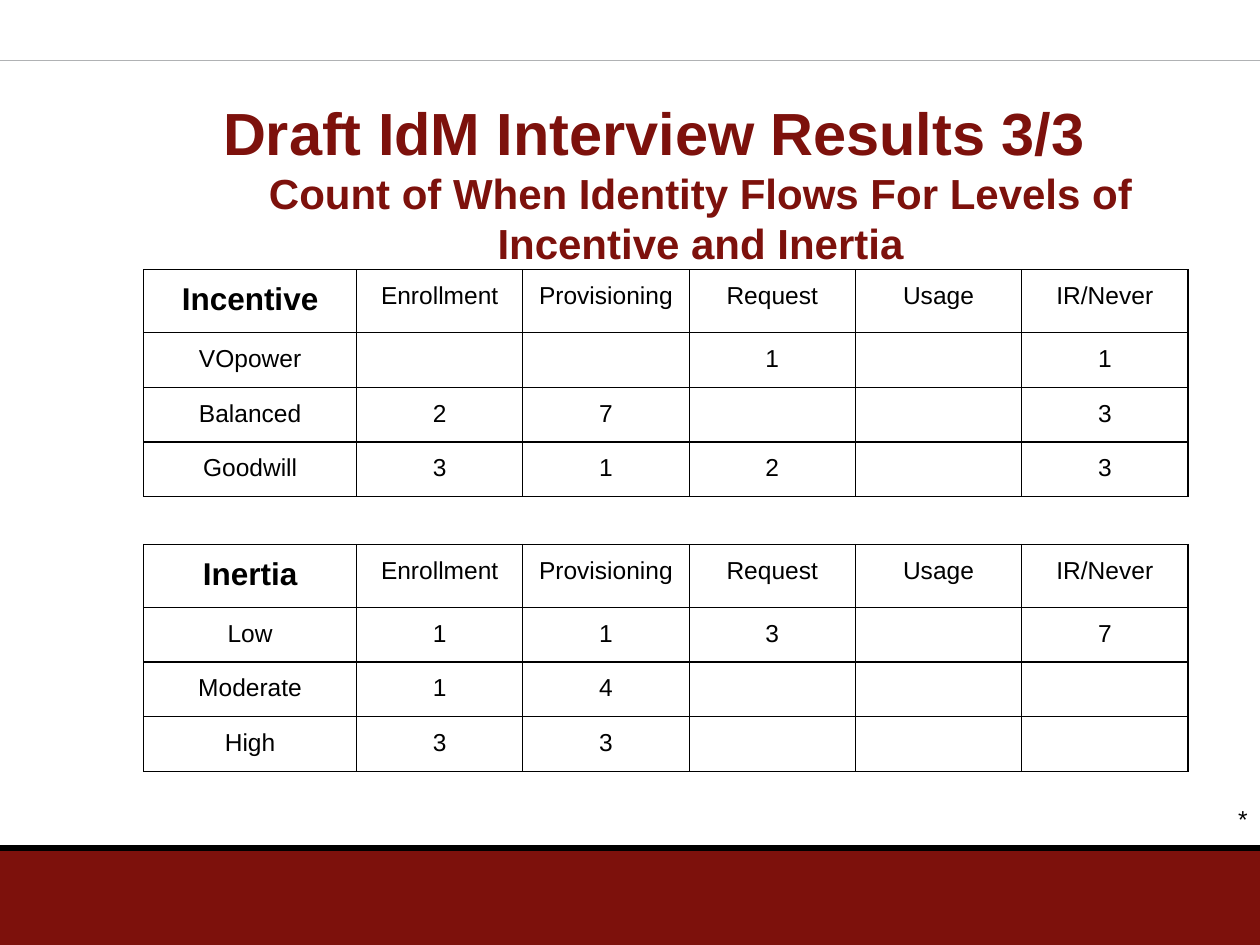
from lxml.etree import SubElement
from pptx import Presentation
from pptx.dml.color import RGBColor
from pptx.enum.shapes import MSO_CONNECTOR, MSO_SHAPE
from pptx.enum.text import MSO_ANCHOR, MSO_AUTO_SIZE, PP_ALIGN
from pptx.oxml.ns import qn
from pptx.util import Inches, Pt

COLORS = {"maroon": "7D110C", "rule": "B0B2B4", "ink": "000000"}
WIDTH, HEIGHT = 10, 7.5
STAGES = ["Enrollment", "Provisioning", "Request", "Usage", "IR/Never"]
LABEL_WIDTH, STAGE_WIDTH = 1.69, 1.32
HEADER_HEIGHT, ROW_HEIGHT = 0.48, 0.42
INCENTIVE = [
    ["VOpower", "", "", "1", "", "1"],
    ["Balanced", "2", "7", "", "", "3"],
    ["Goodwill", "3", "1", "2", "", "3"],
]
INERTIA = [
    ["Low", "1", "1", "3", "", "7"],
    ["Moderate", "1", "4", "", "", ""],
    ["High", "3", "3", "", "", ""],
]


def color(name):
    return RGBColor.from_string(COLORS[name])


def write(paragraph, text, size=14, fill="ink", bold=False, align=PP_ALIGN.CENTER):
    paragraph.alignment = align
    run = paragraph.add_run()
    run.text = text
    run.font.name = "Arial"
    run.font.size = Pt(size)
    run.font.bold = bold
    run.font.color.rgb = color(fill)


def set_margins(target, horizontal, top, bottom):
    target.margin_left = target.margin_right = Inches(horizontal)
    target.margin_top, target.margin_bottom = Inches(top), Inches(bottom)


def add_rule(slide, top, fill, weight):
    """Draw a horizontal line across the whole slide."""
    rule = slide.shapes.add_connector(
        MSO_CONNECTOR.STRAIGHT, 0, Inches(top), Inches(WIDTH), Inches(top))
    rule.line.color.rgb = color(fill)
    rule.line.width = Pt(weight)
    SubElement(rule._element.spPr, qn("a:effectLst"))


def add_frame(slide):
    """Add the top rule, the footer band and the page mark."""
    band_height = HEIGHT / 10
    band = slide.shapes.add_shape(
        MSO_SHAPE.RECTANGLE, 0, Inches(HEIGHT - band_height),
        Inches(WIDTH), Inches(band_height))
    band.shadow.inherit = False
    band.fill.solid()
    band.fill.fore_color.rgb = color("maroon")
    band.line.fill.background()
    add_rule(slide, 0.48, "rule", 0.75)
    add_rule(slide, 6.73, "ink", 3.75)
    mark = slide.shapes.add_textbox(
        Inches(WIDTH - 0.57), Inches(6.33), Inches(0.57), Inches(0.34))
    mark.text_frame.word_wrap = True
    set_margins(mark.text_frame, 0.1, 0.05, 0.05)
    write(mark.text_frame.paragraphs[0], "*", align=PP_ALIGN.RIGHT)


def add_title(slide, left, top, width, height):
    title = slide.shapes.title
    title.left, title.top = Inches(left), Inches(top)
    title.width, title.height = Inches(width), Inches(height)
    frame = title.text_frame
    frame.word_wrap = True
    frame.auto_size = MSO_AUTO_SIZE.NONE
    frame.vertical_anchor = MSO_ANCHOR.TOP
    set_margins(frame, 0.1, 0.15, 0.05)
    write(frame.paragraphs[0], "Draft IdM Interview Results 3/3",
          size=34, fill="maroon", bold=True, align=PP_ALIGN.LEFT)
    write(frame.add_paragraph(),
          "Count of When Identity Flows For Levels of Incentive and Inertia",
          size=24, fill="maroon", bold=True)


def add_borders(cell):
    properties = cell._tc.get_or_add_tcPr()
    for position, side in enumerate(("a:lnL", "a:lnR", "a:lnT", "a:lnB")):
        line = properties.makeelement(qn(side), {"w": str(Pt(0.75))})
        fill = SubElement(line, qn("a:solidFill"))
        SubElement(fill, qn("a:srgbClr"), val=COLORS["ink"])
        properties.insert(position, line)


def add_count_table(slide, heading, body, left, top):
    rows = [[heading, *STAGES], *body]
    widths = [LABEL_WIDTH] + [STAGE_WIDTH] * len(STAGES)
    heights = [HEADER_HEIGHT] + [ROW_HEIGHT] * len(body)
    table = slide.shapes.add_table(
        len(rows), len(widths), Inches(left), Inches(top),
        Inches(sum(widths)), Inches(sum(heights))).table
    table.first_row = table.horz_banding = False
    for column, width in zip(table.columns, widths):
        column.width = Inches(width)
    for row_index, values in enumerate(rows):
        table.rows[row_index].height = Inches(heights[row_index])
        for column_index, value in enumerate(values):
            cell = table.cell(row_index, column_index)
            cell.fill.background()
            add_borders(cell)
            if value:
                is_heading = row_index == column_index == 0
                set_margins(cell, 0.1, 0.1, 0.1)
                write(cell.text_frame.paragraphs[0], value,
                      size=18 if is_heading else 14, bold=is_heading)


def main():
    presentation = Presentation()
    presentation.slide_width, presentation.slide_height = Inches(WIDTH), Inches(HEIGHT)
    slide = presentation.slides.add_slide(presentation.slide_layouts[5])
    add_frame(slide)
    add_title(slide, 1.67, 0.61, 7.78, 1.52)
    add_count_table(slide, "Incentive", INCENTIVE, 1.14, 2.14)
    add_count_table(slide, "Inertia", INERTIA, 1.14, 4.32)
    presentation.save("out.pptx")


if __name__ == "__main__":
    main()
